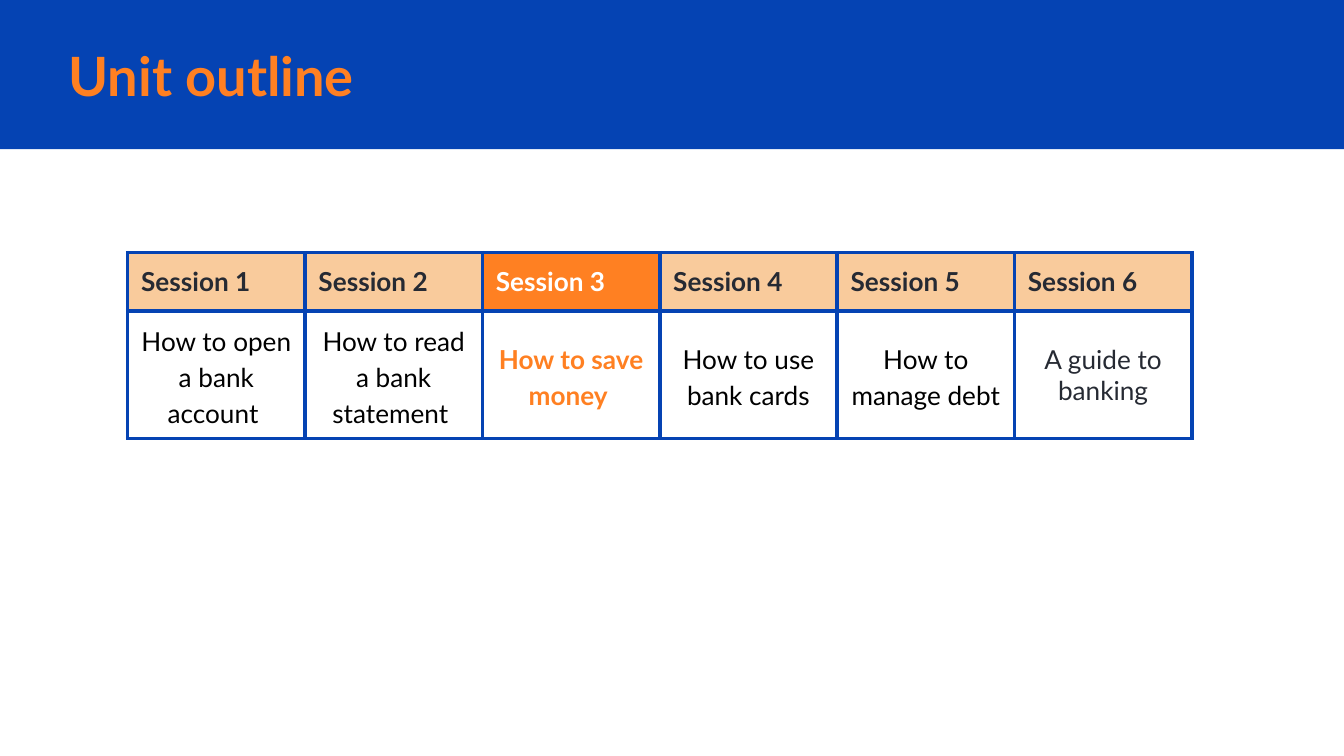
from lxml.etree import SubElement
from pptx import Presentation
from pptx.dml.color import RGBColor
from pptx.enum.shapes import MSO_SHAPE
from pptx.enum.text import MSO_ANCHOR, PP_ALIGN
from pptx.oxml.ns import qn
from pptx.util import Inches, Pt

BLUE = RGBColor(0x05, 0x43, 0xB3)
ORANGE = RGBColor(0xFF, 0x80, 0x22)
PEACH = RGBColor(0xF9, 0xCB, 0x9C)
DARK = RGBColor(0x26, 0x2A, 0x33)
BLACK = RGBColor(0, 0, 0)
WHITE = RGBColor(0xFF, 0xFF, 0xFF)

TOPICS = [
    "How to open a bank account ",
    "How to read a bank statement ",
    "How to save money ",
    "How to use bank cards",
    "How to manage debt",
    "A guide to banking",
]
CURRENT = 2  # the highlighted session
LAST = len(TOPICS) - 1


def write(tf, text, size=14, color=BLACK, bold=False, align=PP_ALIGN.LEFT, spacing=1.0):
    p = tf.paragraphs[0]
    p.alignment = align
    p.line_spacing = spacing
    r = p.add_run()
    r.text = text
    r.font.name = "Lato"
    r.font.size = Pt(size)
    r.font.bold = bold
    r.font.color.rgb = color


def set_margins(target, inset):
    target.margin_left = target.margin_right = Inches(inset)
    target.margin_top = target.margin_bottom = Inches(inset)


def set_borders(cell, color, width):
    tcPr = cell._tc.get_or_add_tcPr()
    for side in ("lnL", "lnR", "lnT", "lnB"):
        ln = SubElement(tcPr, qn(f"a:{side}"), w=str(Pt(width)))
        fill = SubElement(ln, qn("a:solidFill"))
        SubElement(fill, qn("a:srgbClr"), val=str(color))


def format_cell(cell, text, fill, inset, anchor, **text_format):
    set_borders(cell, BLUE, 2.25)
    if fill is None:
        cell.fill.background()
    else:
        cell.fill.solid()
        cell.fill.fore_color.rgb = fill
    set_margins(cell, inset)
    cell.vertical_anchor = anchor
    write(cell.text_frame, text, **text_format)


def add_header(s, x, y, w, h):
    # Blue band, placed behind the title
    band = s.shapes.add_shape(MSO_SHAPE.RECTANGLE, Inches(x), Inches(y), Inches(w), Inches(h))
    band.shadow.inherit = False
    band.fill.solid()
    band.fill.fore_color.rgb = BLUE
    band.line.fill.background()
    s.shapes._spTree.insert(2, band._element)

    # Title
    title = s.shapes.title
    title.left, title.top = Inches(x + 0.41), Inches(y + 0.28)
    title.width, title.height = Inches(8.46), Inches(0.56)
    tf = title.text_frame
    tf.word_wrap = True
    tf.vertical_anchor = MSO_ANCHOR.MIDDLE
    set_margins(tf, 0.1)
    write(tf, "Unit outline", size=29, color=ORANGE, bold=True)


def add_sessions(s, x, y, w, heights):
    frame = s.shapes.add_table(2, len(TOPICS), Inches(x), Inches(y),
                               Inches(w), Inches(sum(heights)))
    table = frame.table
    for row, height in zip(table.rows, heights):
        row.height = Inches(height)

    for i, topic in enumerate(TOPICS):
        table.columns[i].width = Inches(w / len(TOPICS))
        current, last = i == CURRENT, i == LAST
        # Session number
        format_cell(table.cell(0, i), f"Session {i + 1}", ORANGE if current else PEACH,
                    0.1, MSO_ANCHOR.TOP, color=WHITE if current else DARK, bold=True)
        # Topic
        color = ORANGE if current else DARK if last else BLACK
        format_cell(table.cell(1, i), topic, None, 0.1 if last else 0.07,
                    MSO_ANCHOR.MIDDLE, color=color, bold=current,
                    align=PP_ALIGN.CENTER, spacing=1.0 if last else 1.15)


def main():
    prs = Presentation()
    prs.slide_width = Inches(10)
    prs.slide_height = prs.slide_width * 9 // 16
    s = prs.slides.add_slide(prs.slide_layouts[5])
    add_header(s, 0, 0, 10, 1.11)
    add_sessions(s, 0.95, 1.88, 7.92, (0.43, 0.95))
    prs.save("out.pptx")


if __name__ == "__main__":
    main()
